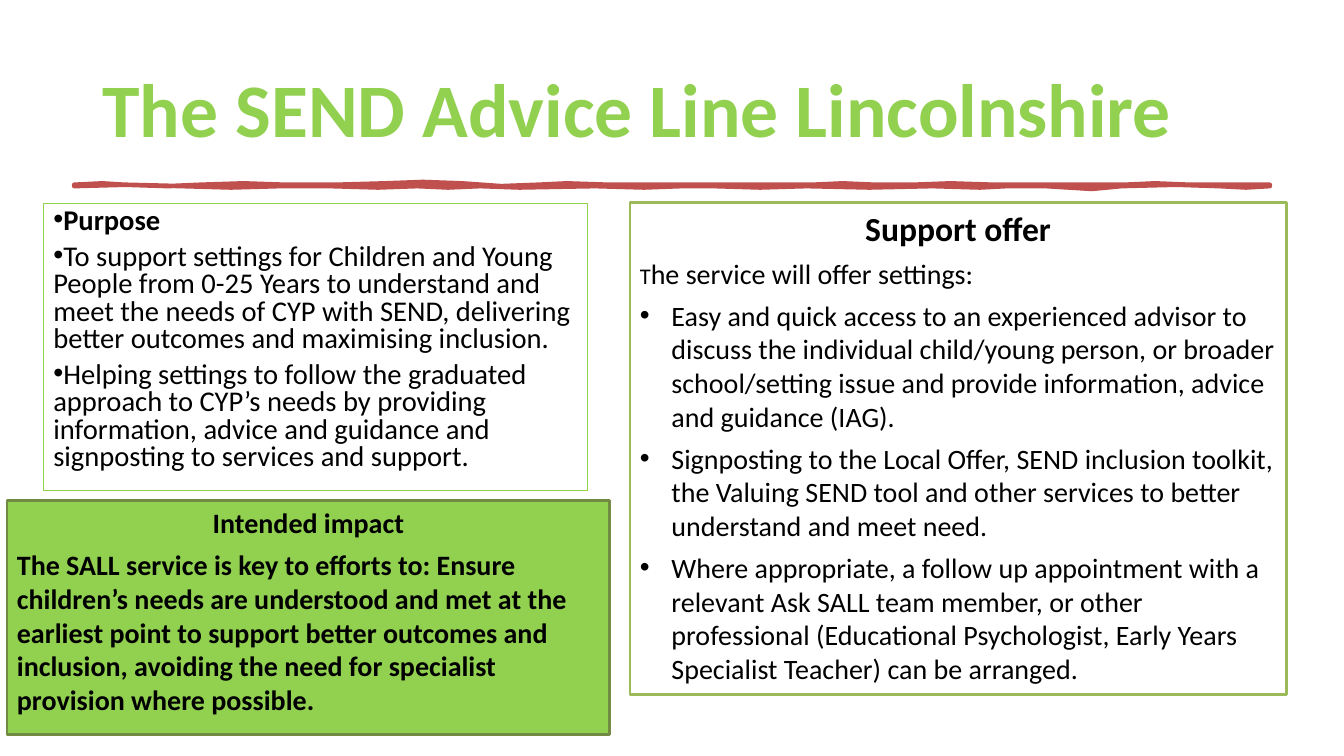
from dataclasses import dataclass
from typing import Optional

from lxml import etree
from pptx import Presentation
from pptx import util as u
from pptx.dml.color import RGBColor
from pptx.enum import shapes, text
from pptx.oxml.ns import qn

FONT = "Calibri"
COLOURS = {
    "lime": "92D050",
    "olive": "9BBB59",
    "dark olive": "738A42",
    "red": "C0504D",
    "black": "000000",
}


@dataclass
class Line:
    """One paragraph; lead is an opening part set at lead_size."""
    words: str
    size: float = 20
    bold: bool = False
    centred: bool = False
    bullet: bool = False
    lead: str = ""
    lead_size: float = 16


@dataclass
class Panel:
    left: float
    top: float
    width: float
    height: float
    border: str
    border_width: float
    lines: list[Line]
    fill: Optional[str] = None
    spacing: float = 1.0
    margin: float = 22.5
    indent: float = -22.5


PANELS = [
    Panel(31, 145.5, 388.8, 205.2, "lime", 0.75, [
        Line("Purpose", 20.4, bold=True, bullet=True),
        Line("To support settings for Children and Young People from 0-25 Years to "
             "understand and meet the needs of CYP with SEND, delivering better "
             "outcomes and maximising inclusion.", 20.4, bullet=True),
        Line("Helping settings to follow the graduated approach to CYP’s needs by "
             "providing information, advice and guidance and signposting to services "
             "and support.", 20.4, bullet=True),
    ], spacing=0.8, margin=0, indent=-18),
    Panel(450, 144.7, 468.7, 351.4, "olive", 2, [
        Line("Support offer", 24, bold=True, centred=True),
        Line("he service will offer settings:", lead="T"),
        Line("Easy and quick access to an experienced advisor to discuss the individual "
             "child/young person, or broader school/setting issue and provide "
             "information, advice and guidance (IAG).", bullet=True),
        Line("Signposting to the Local Offer, SEND inclusion toolkit, the Valuing SEND "
             "tool and other services to better understand and meet need.", bullet=True),
        Line("Where appropriate, a follow up appointment with a relevant Ask SALL team "
             "member, or other professional (Educational Psychologist, Early Years "
             "Specialist Teacher) can be arranged.", bullet=True),
    ]),
    Panel(5, 357.8, 430.6, 167, "dark olive", 2, [
        Line("Intended impact", bold=True, centred=True),
        Line("The SALL service is key to efforts to: Ensure children’s needs are "
             "understood and met at the earliest point to support better outcomes and "
             "inclusion, avoiding the need for specialist provision where possible.",
             bold=True),
    ], fill="lime"),
]

# Edges of the hand-drawn rule, each listed from left to right
RULE_TOP = [
    (52.6, 131.8), (73, 131.2), (89, 131.8), (120, 132.6), (143, 131.8), (174, 131),
    (204, 131.8), (240, 132), (275, 131.2), (302, 130.2), (330, 131.4), (358, 132.9),
    (384, 131.8), (405, 131.2), (435, 132.3), (465, 131.8), (500, 131.6), (536, 132),
    (580, 132.3), (602, 131.2), (625, 131.8), (652, 132.2), (679, 131), (710, 132.2),
    (741, 131.8), (772, 132), (803, 131.8), (825, 130.8), (850, 131.6), (880, 132.4),
    (907, 131.8),
]
RULE_BOTTOM = [
    (52.6, 133.2), (90, 132.4), (130, 133.2), (165, 134.4), (200, 133.2), (236, 132.6),
    (270, 133.8), (298, 133.2), (320, 134.2), (343, 133.2), (371, 134.4), (425, 133.2),
    (460, 133.8), (487, 133), (510, 133.2), (543, 134.4), (576, 133.2), (621, 133.6),
    (666, 133.2), (700, 134), (719, 133.2), (747, 133.2), (780, 135), (801, 133.2),
    (840, 132.4), (871, 133.2), (890, 134), (907, 133.2),
]


def colour(name: str) -> RGBColor:
    return RGBColor.from_string(COLOURS[name])


def set_outline(shape, name: str, width: float) -> None:
    shape.shadow.inherit = False
    shape.line.color.rgb = colour(name)
    shape.line.width = u.Pt(width)


def set_font(paragraph, size: float, bold: bool, name: str) -> None:
    font = paragraph.font
    font.name, font.size, font.bold = FONT, u.Pt(size), bold
    font.color.rgb = colour(name)


def add_bullet(paragraph, margin: float, indent: float) -> None:
    properties = paragraph._p.get_or_add_pPr()
    properties.set("marL", str(u.Pt(margin)))
    properties.set("indent", str(u.Pt(indent)))
    etree.SubElement(properties, qn("a:buFont")).set("typeface", "Arial")
    etree.SubElement(properties, qn("a:buChar")).set("char", "•")


def write_lines(frame, panel: Panel) -> None:
    for index, line in enumerate(panel.lines):
        paragraph = frame.add_paragraph() if index else frame.paragraphs[0]
        if line.bullet:
            add_bullet(paragraph, panel.margin, panel.indent)
        alignment = text.PP_ALIGN
        paragraph.alignment = alignment.CENTER if line.centred else alignment.LEFT
        paragraph.line_spacing = panel.spacing
        paragraph.space_after = u.Pt(6)
        set_font(paragraph, line.size, line.bold, "black")
        if line.lead:
            lead = paragraph.add_run()
            lead.text = line.lead
            lead.font.size = u.Pt(line.lead_size)
        paragraph.add_run().text = line.words


def add_panel(slide, panel: Panel) -> None:
    box = (panel.left, panel.top, panel.width, panel.height)
    shape = slide.shapes.add_shape(shapes.MSO_SHAPE.RECTANGLE, *map(u.Pt, box))
    set_outline(shape, panel.border, panel.border_width)
    if panel.fill:
        shape.fill.solid()
        shape.fill.fore_color.rgb = colour(panel.fill)
    else:
        shape.fill.background()
    frame = shape.text_frame
    frame.word_wrap = True
    frame.vertical_anchor = text.MSO_ANCHOR.TOP
    write_lines(frame, panel)


def add_title(slide) -> None:
    title = slide.shapes.title
    title.left, title.top, title.width, title.height = map(u.Pt, (66, 29, 828, 104))
    frame = title.text_frame
    frame.text = "The SEND Advice Line Lincolnshire"
    frame.word_wrap = True
    frame.auto_size = text.MSO_AUTO_SIZE.NONE
    frame.vertical_anchor = text.MSO_ANCHOR.MIDDLE
    paragraph = frame.paragraphs[0]
    paragraph.alignment = text.PP_ALIGN.LEFT
    paragraph.line_spacing = 0.9
    paragraph.space_after = u.Pt(6)
    set_font(paragraph, 54, True, "lime")


def add_rule(slide) -> None:
    outline = RULE_TOP + RULE_BOTTOM[::-1]
    builder = slide.shapes.build_freeform(*outline[0], scale=u.Pt(1))
    builder.add_line_segments(outline[1:], close=True)
    rule = builder.convert_to_shape()
    rule.fill.solid()
    rule.fill.fore_color.rgb = colour("red")
    set_outline(rule, "red", 3.25)


def main() -> None:
    presentation = Presentation()
    presentation.slide_width, presentation.slide_height = u.Pt(960), u.Pt(540)
    slide = presentation.slides.add_slide(presentation.slide_layouts[5])
    add_title(slide)
    add_rule(slide)
    for panel in PANELS:
        add_panel(slide, panel)
    presentation.save("out.pptx")


if __name__ == "__main__":
    main()
